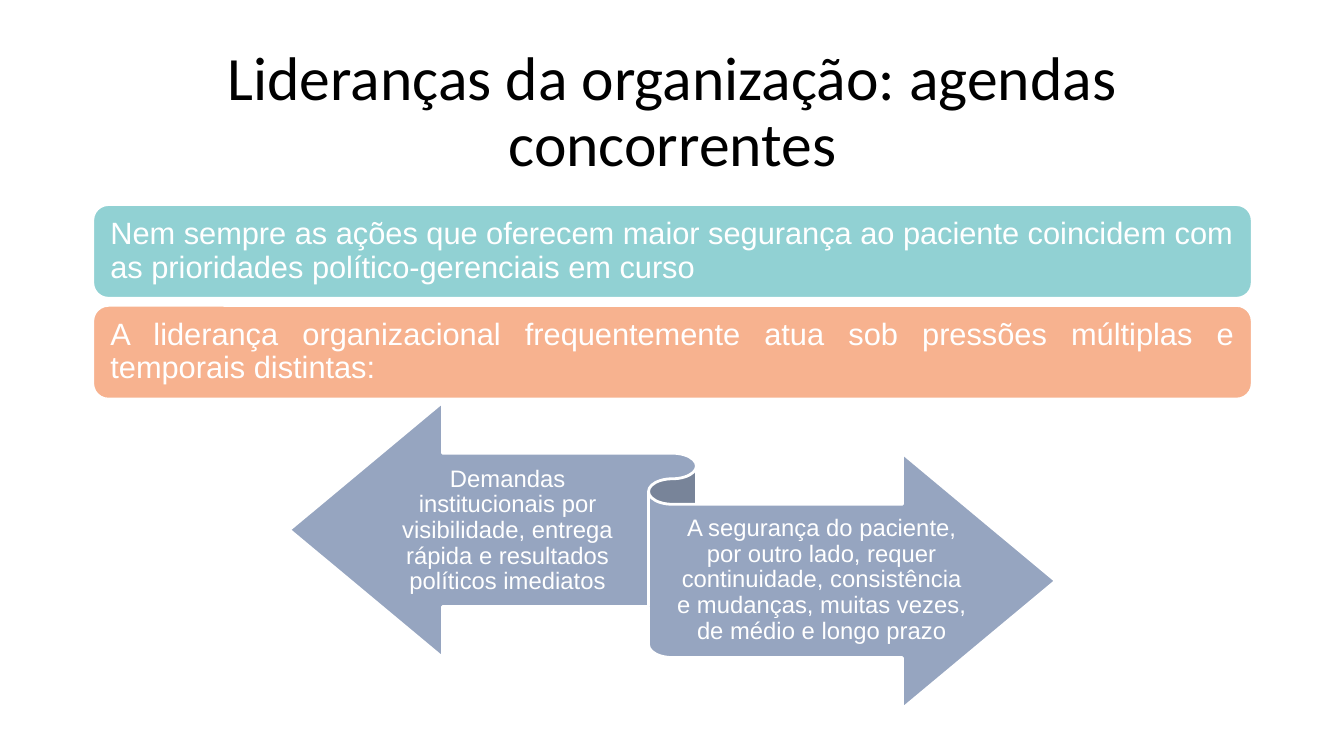
from dataclasses import dataclass

from pptx import Presentation
from pptx.dml.color import RGBColor
from pptx.enum.shapes import MSO_SHAPE
from pptx.enum.text import MSO_ANCHOR, PP_ALIGN
from pptx.shapes.autoshape import Shape
from pptx.slide import Slide
from pptx.util import Emu, Pt

EMU_PER_PX = 9144  # 100 px to the inch


@dataclass(frozen=True)
class Theme:
    ink: str = "000000"
    white: str = "FFFFFF"
    teal: str = "91D1D3"
    orange: str = "F7B28F"
    blue: str = "96A5C0"
    title_font: str = "Calibri"
    body_font: str = "Arial"
    title_size: int = 44
    bar_size: int = 22
    arrow_size: int = 17
    outline: int = 2
    line_spacing: float = 0.9


@dataclass(frozen=True)
class Box:
    left: int
    top: int
    width: int
    height: int


@dataclass(frozen=True)
class Bar:
    text: str
    fill: str
    align: PP_ALIGN


@dataclass(frozen=True)
class Label:
    text: str
    box: Box
    font: str
    size: int
    color: str
    margin_x: int
    margin_y: int


THEME = Theme()

# Content
BAR_AREA = Box(92, 203, 1150, 93)
BAR_STEP = 100
BAR_MARGIN_X, BAR_MARGIN_Y = 13, 13
BARS = [
    Bar("Nem sempre as ações que oferecem maior segurança ao paciente coincidem "
        "com as prioridades político-gerenciais em curso", THEME.teal, PP_ALIGN.LEFT),
    Bar("A liderança organizacional frequentemente atua sob pressões múltiplas e "
        "temporais distintas:", THEME.orange, PP_ALIGN.JUSTIFY),
]
RIBBON = Box(287, 399, 760, 304)
RIBBON_ADJUSTMENTS = (0.5, 0.5, 0.16667)
LABELS = [
    Label("Lideranças da organização: agendas concorrentes", Box(92, 40, 1150, 145),
          THEME.title_font, THEME.title_size, THEME.ink, 10, 5),
    Label("Demandas institucionais por visibilidade, entrega rápida e resultados "
          "políticos imediatos", Box(378, 452, 251, 149),
          THEME.body_font, THEME.arrow_size, THEME.white, 0, 7),
    Label("A segurança do paciente, por outro lado, requer continuidade, consistência "
          "e mudanças, muitas vezes, de médio e longo prazo", Box(667, 501, 296, 149),
          THEME.body_font, THEME.arrow_size, THEME.white, 0, 7),
]


def px(length: int) -> Emu:
    return Emu(length * EMU_PER_PX)


def place(box: Box) -> tuple[Emu, Emu, Emu, Emu]:
    return px(box.left), px(box.top), px(box.width), px(box.height)


def write(shape: Shape, text: str, font: str, size: int, color: str,
          align: PP_ALIGN, margin_x: int, margin_y: int) -> None:
    frame = shape.text_frame
    frame.word_wrap = True
    frame.vertical_anchor = MSO_ANCHOR.MIDDLE
    frame.margin_left = frame.margin_right = px(margin_x)
    frame.margin_top = frame.margin_bottom = px(margin_y)
    paragraph = frame.paragraphs[0]
    paragraph.alignment = align
    paragraph.line_spacing = THEME.line_spacing
    run = paragraph.add_run()
    run.text = text
    run.font.name = font
    run.font.size = Pt(size)
    run.font.color.rgb = RGBColor.from_string(color)


def add_filled_shape(slide: Slide, kind: MSO_SHAPE, box: Box, fill: str) -> Shape:
    shape = slide.shapes.add_shape(kind, *place(box))
    shape.shadow.inherit = False
    shape.fill.solid()
    shape.fill.fore_color.rgb = RGBColor.from_string(fill)
    shape.line.color.rgb = RGBColor.from_string(THEME.white)
    shape.line.width = Pt(THEME.outline)
    return shape


def add_bar(slide: Slide, bar: Bar, row: int) -> None:
    box = Box(BAR_AREA.left, BAR_AREA.top + row * BAR_STEP, BAR_AREA.width, BAR_AREA.height)
    shape = add_filled_shape(slide, MSO_SHAPE.ROUNDED_RECTANGLE, box, bar.fill)
    write(shape, bar.text, THEME.body_font, THEME.bar_size, THEME.white,
          bar.align, BAR_MARGIN_X, BAR_MARGIN_Y)


def add_ribbon(slide: Slide) -> None:
    ribbon = add_filled_shape(slide, MSO_SHAPE.LEFT_RIGHT_RIBBON, RIBBON, THEME.blue)
    for index, value in enumerate(RIBBON_ADJUSTMENTS):
        ribbon.adjustments[index] = value


def add_label(slide: Slide, label: Label) -> None:
    shape = slide.shapes.add_textbox(*place(label.box))
    write(shape, label.text, label.font, label.size, label.color,
          PP_ALIGN.CENTER, label.margin_x, label.margin_y)


def main() -> None:
    presentation = Presentation()
    presentation.slide_width, presentation.slide_height = px(1333), px(750)
    slide = presentation.slides.add_slide(presentation.slide_layouts[6])

    # Statement bars
    for row, bar in enumerate(BARS):
        add_bar(slide, bar, row)

    # Opposing arrows, then the title and arrow texts
    add_ribbon(slide)
    for label in LABELS:
        add_label(slide, label)

    presentation.save("out.pptx")


if __name__ == "__main__":
    main()
